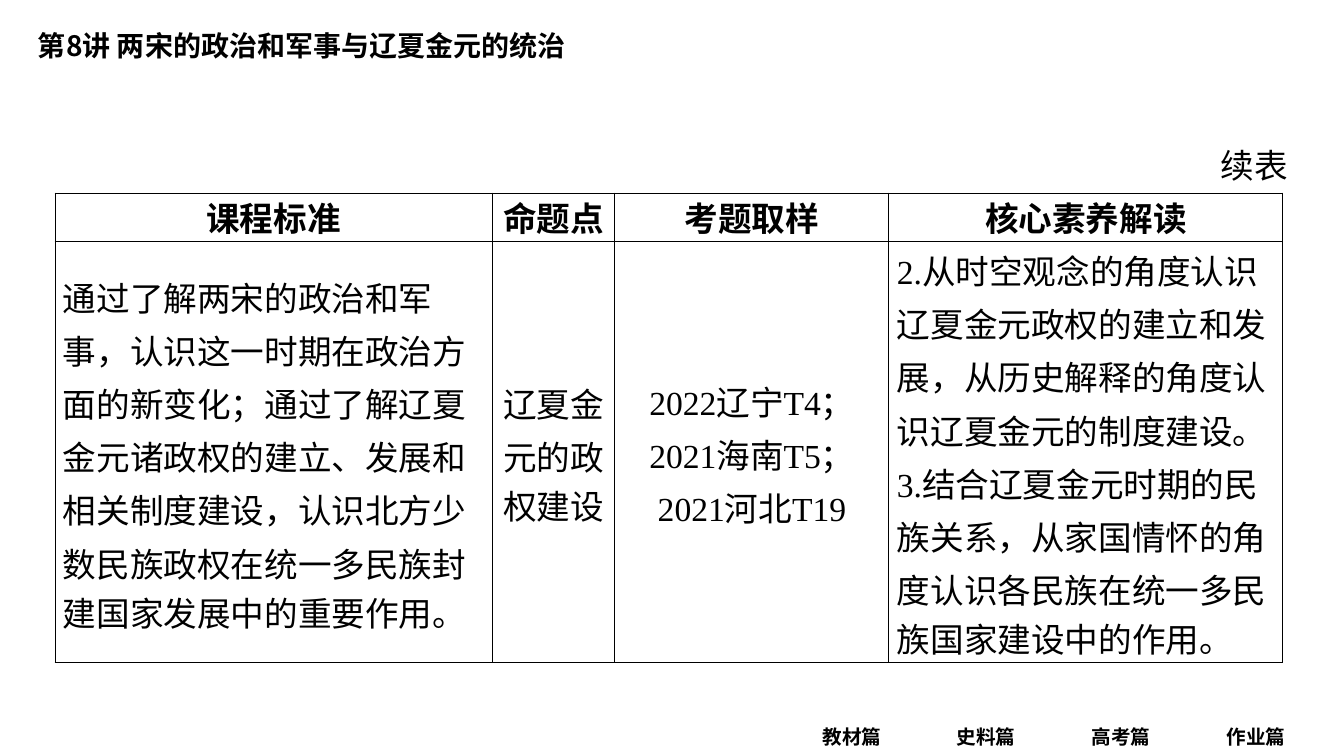
from dataclasses import dataclass

from lxml import etree
from pptx import Presentation
from pptx.dml.color import RGBColor
from pptx.enum.text import MSO_ANCHOR, PP_ALIGN
from pptx.oxml.ns import qn
from pptx.util import Emu, Pt

LEFT, CENTER, RIGHT = PP_ALIGN.LEFT, PP_ALIGN.CENTER, PP_ALIGN.RIGHT
TOP, MIDDLE = MSO_ANCHOR.TOP, MSO_ANCHOR.MIDDLE
COLORS = {"ink": "000000", "paper": "FFFFFF"}
SERIF, SANS = "Times New Roman", "Noto Sans CJK SC"
SCALE = 914400 / 100.8


@dataclass
class Label:
    text: str
    left: int
    top: int
    width: int
    height: int
    size: int
    align: PP_ALIGN = LEFT
    face: str = SERIF
    bold: bool = True
    anchor: MSO_ANCHOR = MIDDLE
    space: float = 1.0


@dataclass
class Column:
    head: str
    width: int
    align: PP_ALIGN
    lines: list[str]
    last: int = 35  # spacing of the final line, in points


def px(count: int) -> Emu:
    return Emu(round(count * SCALE))


def style(para, size: int, bold: bool, align: PP_ALIGN, face: str = SERIF) -> None:
    para.alignment = align
    font = para.font
    font.size, font.bold, font.name = Pt(size), bold, face
    font.color.rgb = RGBColor.from_string(COLORS["ink"])
    latin = para._p.pPr.find(qn("a:defRPr")).find(qn("a:latin"))
    east = etree.Element(qn("a:ea"), typeface=SANS)
    latin.addnext(east)


def add_label(slide, label: Label) -> None:
    box = slide.shapes.add_textbox(
        px(label.left), px(label.top), px(label.width), px(label.height))
    frame = box.text_frame
    frame.word_wrap = True
    frame.vertical_anchor = label.anchor
    frame.margin_left = frame.margin_right = 0
    frame.margin_top = frame.margin_bottom = 0
    para = frame.paragraphs[0]
    para.text = label.text
    para.line_spacing = label.space
    style(para, label.size, label.bold, label.align, label.face)


def add_edges(cell) -> None:
    props = cell._tc.get_or_add_tcPr()
    for side in ("lnL", "lnR", "lnT", "lnB"):
        line = etree.SubElement(props, qn(f"a:{side}"), w=str(Pt(0.75)))
        fill = etree.SubElement(line, qn("a:solidFill"))
        etree.SubElement(fill, qn("a:srgbClr"), val=COLORS["ink"])


def fill_cell(cell, lines: list[str], align: PP_ALIGN, bold: bool,
              step: int, last: int) -> None:
    add_edges(cell)
    cell.fill.background()
    cell.vertical_anchor = MIDDLE
    cell.margin_left = cell.margin_right = px(8)
    cell.margin_top = cell.margin_bottom = 0
    cell.text = "\n".join(lines)
    paras = cell.text_frame.paragraphs
    for para in paras:
        style(para, 24, bold, align)
        para.line_spacing = Pt(step)
    paras[-1].line_spacing = Pt(last)


def add_grid(slide, columns: list[Column], heights: list[int]) -> None:
    width = sum(col.width for col in columns)
    table = slide.shapes.add_table(
        2, len(columns), px(55), px(193), px(width), px(sum(heights))).table
    table.first_row = table.horz_banding = False
    for row, height in zip(table.rows, heights):
        row.height = px(height)
    for i, col in enumerate(columns):
        table.columns[i].width = px(col.width)
        fill_cell(table.cell(0, i), [col.head], CENTER, True, 34, 34)
        fill_cell(table.cell(1, i), col.lines, col.align, False, 38, col.last)


# Title, footer tabs and table note
LABELS = [
    Label("第8讲 两宋的政治和军事与辽夏金元的统治", 38, 23, 1118, 44, 20, face=SANS),
    *(Label(name, 795 + round(134.5 * i), 721, 114, 32, 14, CENTER)
      for i, name in enumerate(["教材篇", "史料篇", "高考篇", "作业篇"])),
    Label("续表", 55, 125, 1233, 54, 24, RIGHT, bold=False, anchor=TOP, space=1.5),
]

# Table content
COLUMNS = [
    Column("课程标准", 437, LEFT, [
        "通过了解两宋的政治和军",
        "事，认识这一时期在政治方",
        "面的新变化；通过了解辽夏",
        "金元诸政权的建立、发展和",
        "相关制度建设，认识北方少",
        "数民族政权在统一多民族封",
        "建国家发展中的重要作用。"]),
    Column("命题点", 123, CENTER, ["辽夏金", "元的政", "权建设"]),
    Column("考题取样", 274, CENTER,
           ["2022辽宁T4；", "2021海南T5；", "2021河北T19"], 38),
    Column("核心素养解读", 394, LEFT, [
        "2.从时空观念的角度认识",
        "辽夏金元政权的建立和发",
        "展，从历史解释的角度认",
        "识辽夏金元的制度建设。",
        "3.结合辽夏金元时期的民",
        "族关系，从家国情怀的角",
        "度认识各民族在统一多民",
        "族国家建设中的作用。"]),
]


def main() -> None:
    deck = Presentation()
    deck.slide_width, deck.slide_height = px(1344), px(756)
    slide = deck.slides.add_slide(deck.slide_layouts[6])
    back = slide.background.fill
    back.solid()
    back.fore_color.rgb = RGBColor.from_string(COLORS["paper"])
    for label in LABELS:
        add_label(slide, label)
    add_grid(slide, COLUMNS, [48, 421])
    deck.save("out.pptx")


if __name__ == "__main__":
    main()
